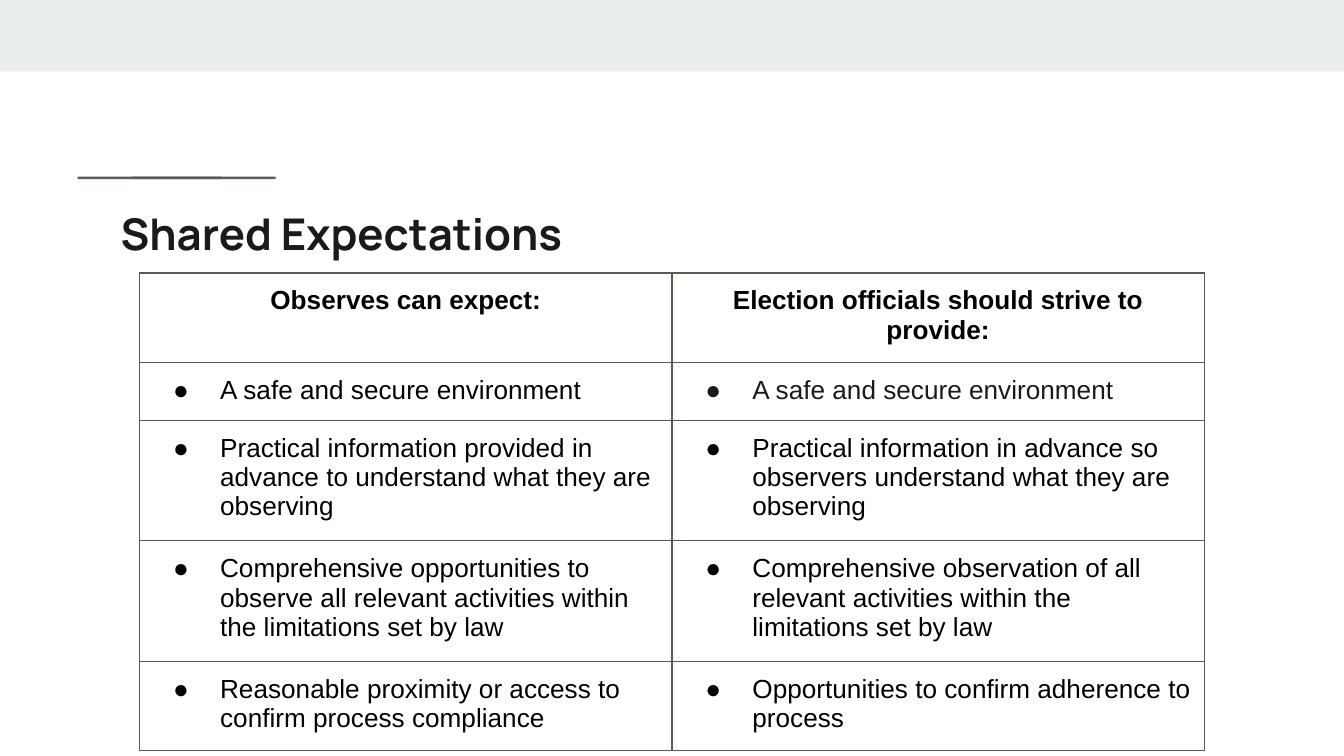
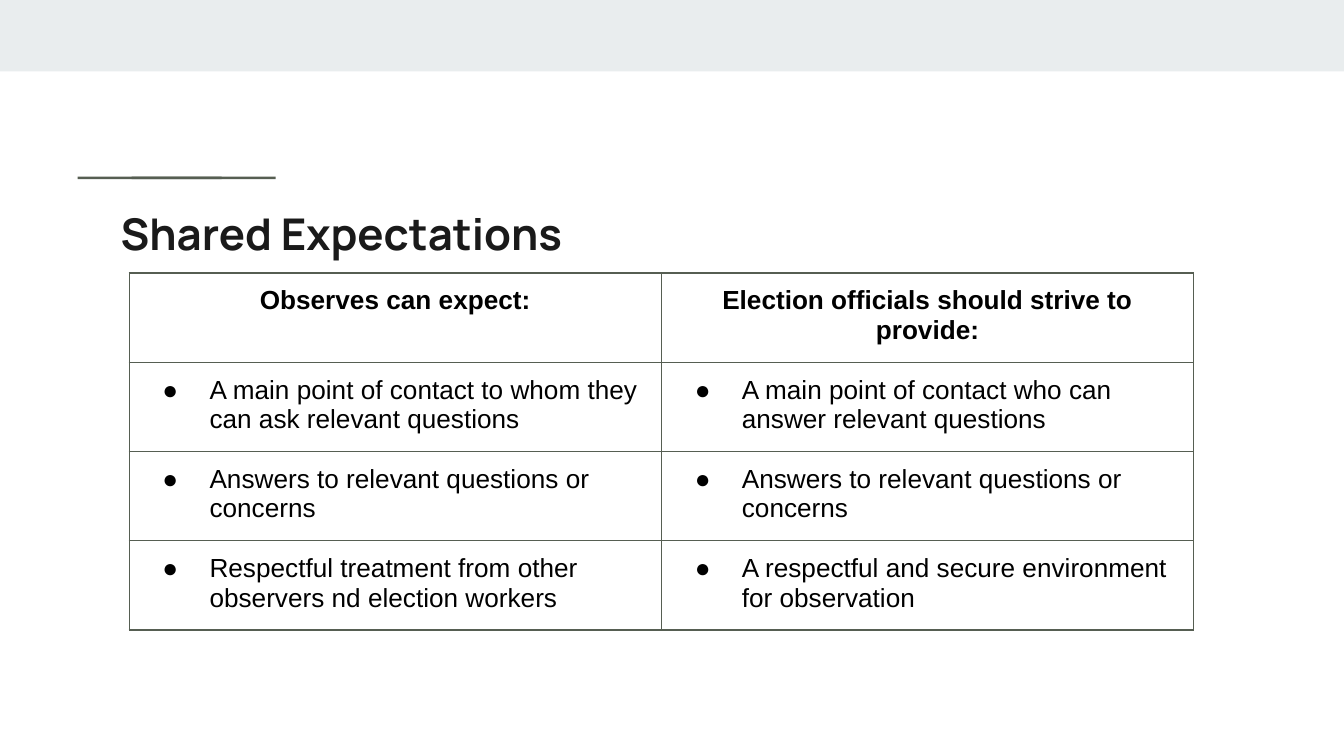
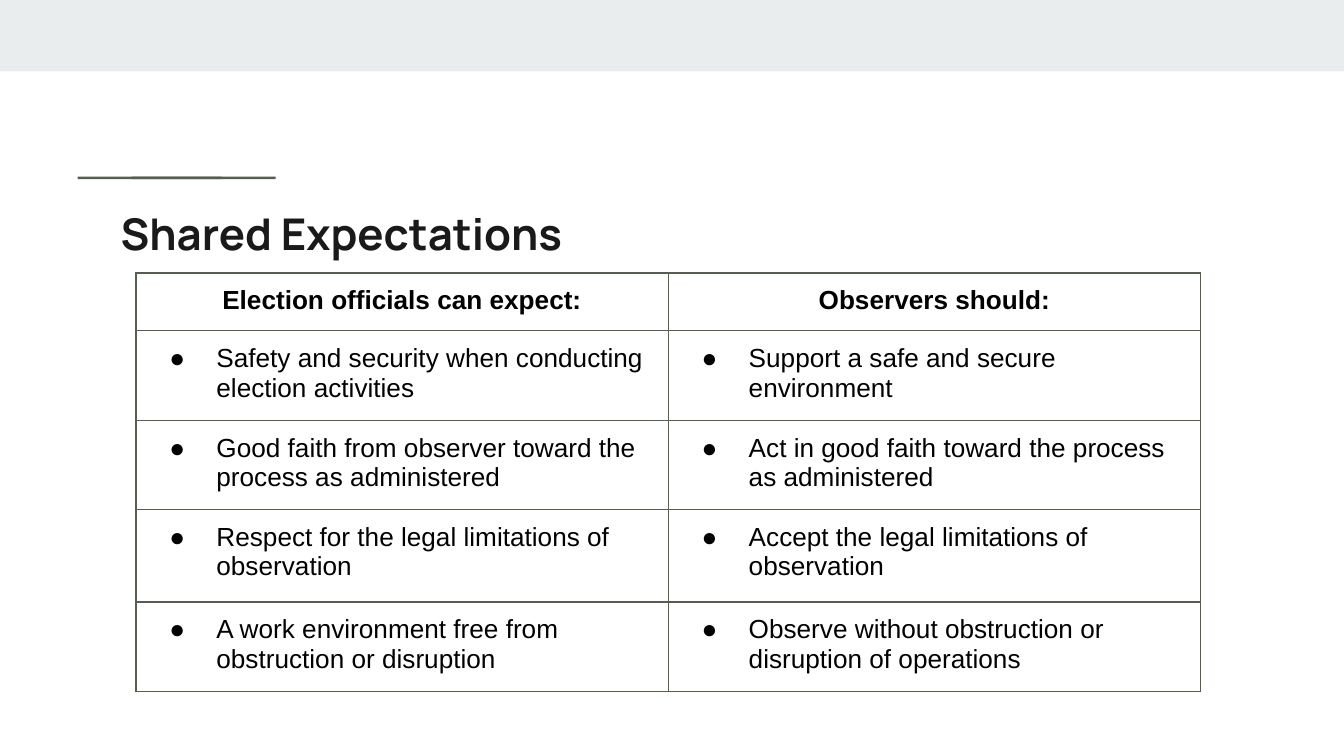
import dataclasses

import pptx
import pptx.dml.color
import pptx.enum.shapes
import pptx.enum.text
import pptx.oxml.ns
import pptx.util
from lxml import etree

Cm = pptx.util.Cm


@dataclasses.dataclass(frozen=True)
class Theme:
    band: str = "E9EDEE"
    line: str = "565E52"
    ink: str = "1A1A1A"
    black: str = "000000"
    head_font: str = "Manrope"
    body_font: str = "Arial"
    head_size: float = 23.4
    body_size: float = 14
    edge: float = 0.75
    inset: float = 0.25
    row: float = 1.07


THEME = Theme()
WIDTH, HEIGHT = 25.4, 14.29
TITLE = "Shared Expectations"
PAIR = ("Observes can expect:", "Election officials should strive to provide:")

# Each table: left edge, rows of text, cells in the softer ink, taller rows
TABLES = [
    dict(left=2.64, soft={(1, 1)}, rows=[
        PAIR,
        ("A safe and secure environment", "A safe and secure environment"),
        ("Practical information provided in advance to understand what they are observing",
         "Practical information in advance so observers understand what they are observing"),
        ("Comprehensive opportunities to observe all relevant activities within "
         "the limitations set by law",
         "Comprehensive observation of all relevant activities within the limitations set by law"),
        ("Reasonable proximity or access to confirm process compliance",
         "Opportunities to confirm adherence to process"),
    ]),
    dict(left=2.44, rows=[
        PAIR,
        ("A main point of contact to whom they can ask relevant questions",
         "A main point of contact who can answer relevant questions"),
        ("Answers to relevant questions or concerns",
         "Answers to relevant questions or concerns"),
        ("Respectful treatment from other observers nd election workers",
         "A respectful and secure environment for observation"),
    ]),
    dict(left=2.57, tall={3: 1.75}, rows=[
        ("Election officials can expect:", "Observers should:"),
        ("Safety and security when conducting election activities",
         "Support a safe and secure environment"),
        ("Good faith from observer toward the process as administered",
         "Act in good faith toward the process as administered"),
        ("Respect for the legal limitations of observation",
         "Accept the legal limitations of observation"),
        ("A work environment free from obstruction or disruption",
         "Observe without obstruction or disruption of operations"),
    ]),
]


def shade(code):
    return pptx.dml.color.RGBColor.from_string(code)


def node(parent, tag, **attrs):
    return etree.SubElement(parent, pptx.oxml.ns.qn(tag), attrs)


def add_run(para, text, font, size, color, bold):
    run = para.add_run()
    run.text = text
    run.font.name = font
    run.font.size = pptx.util.Pt(size)
    run.font.bold = bold
    run.font.color.rgb = shade(color)


def pad(item):
    """Give a text frame or a cell the same inset on all sides."""
    for side in ("left", "right", "top", "bottom"):
        setattr(item, f"margin_{side}", Cm(THEME.inset))


def add_block(slide, left, top, width, height, color):
    block = slide.shapes.add_shape(
        pptx.enum.shapes.MSO_SHAPE.RECTANGLE, Cm(left), Cm(top), Cm(width), Cm(height))
    block.shadow.inherit = False
    block.fill.solid()
    block.fill.fore_color.rgb = shade(color)
    block.line.fill.background()


def add_accent(slide, left, top):
    """Draw two thin bars that overlap to form one rule."""
    for shift in (0, 1.02):
        add_block(slide, left + shift, top, 2.72, 0.05, THEME.line)


def add_title(slide, left, top, width, height):
    box = slide.shapes.add_textbox(Cm(left), Cm(top), Cm(width), Cm(height))
    frame = box.text_frame
    frame.word_wrap = True
    pad(frame)
    add_run(frame.paragraphs[0], TITLE, THEME.head_font, THEME.head_size, THEME.ink, True)


def add_edges(cell):
    props = cell._tc.get_or_add_tcPr()
    for side in "LRTB":
        edge = node(props, f"a:ln{side}", w=str(pptx.util.Pt(THEME.edge)))
        node(node(edge, "a:solidFill"), "a:srgbClr", val=THEME.line)


def add_bullet(para, color):
    props = para._p.get_or_add_pPr()
    props.set("marL", str(Cm(1.27)))
    props.set("indent", str(Cm(-0.89)))
    node(node(props, "a:buClr"), "a:srgbClr", val=color)
    node(props, "a:buFont", typeface=THEME.body_font)
    node(props, "a:buChar", char="●")


def fill_cell(cell, text, head, color):
    pad(cell)
    add_edges(cell)
    cell.fill.background()
    para = cell.text_frame.paragraphs[0]
    if head:
        para.alignment = pptx.enum.text.PP_ALIGN.CENTER
    else:
        add_bullet(para, color)
    add_run(para, text, THEME.body_font, THEME.body_size, color, head)


def add_grid(slide, left, top, width, rows, soft=(), tall=None):
    tall = tall or {}
    sizes = [tall.get(i, THEME.row) for i in range(len(rows))]
    table = slide.shapes.add_table(
        len(rows), 2, Cm(left), Cm(top), Cm(width), Cm(sum(sizes))).table
    table.first_row = table.horz_banding = False
    for col in table.columns:
        col.width = Cm(width / 2)
    for i, texts in enumerate(rows):
        table.rows[i].height = Cm(sizes[i])
        for j, text in enumerate(texts):
            color = THEME.ink if (i, j) in soft else THEME.black
            fill_cell(table.cell(i, j), text, i == 0, color)


def add_page(deck, data):
    slide = deck.slides.add_slide(deck.slide_layouts[6])
    add_block(slide, 0, 0, WIDTH, 1.35, THEME.band)
    add_accent(slide, 1.47, 3.34)
    add_title(slide, 2.03, 3.66, 21.36, 1.5)
    add_grid(slide, top=5.16, width=20.12, **data)


def main():
    deck = pptx.Presentation()
    deck.slide_width, deck.slide_height = Cm(WIDTH), Cm(HEIGHT)
    for data in TABLES:
        add_page(deck, data)
    deck.save("out.pptx")


if __name__ == "__main__":
    main()
